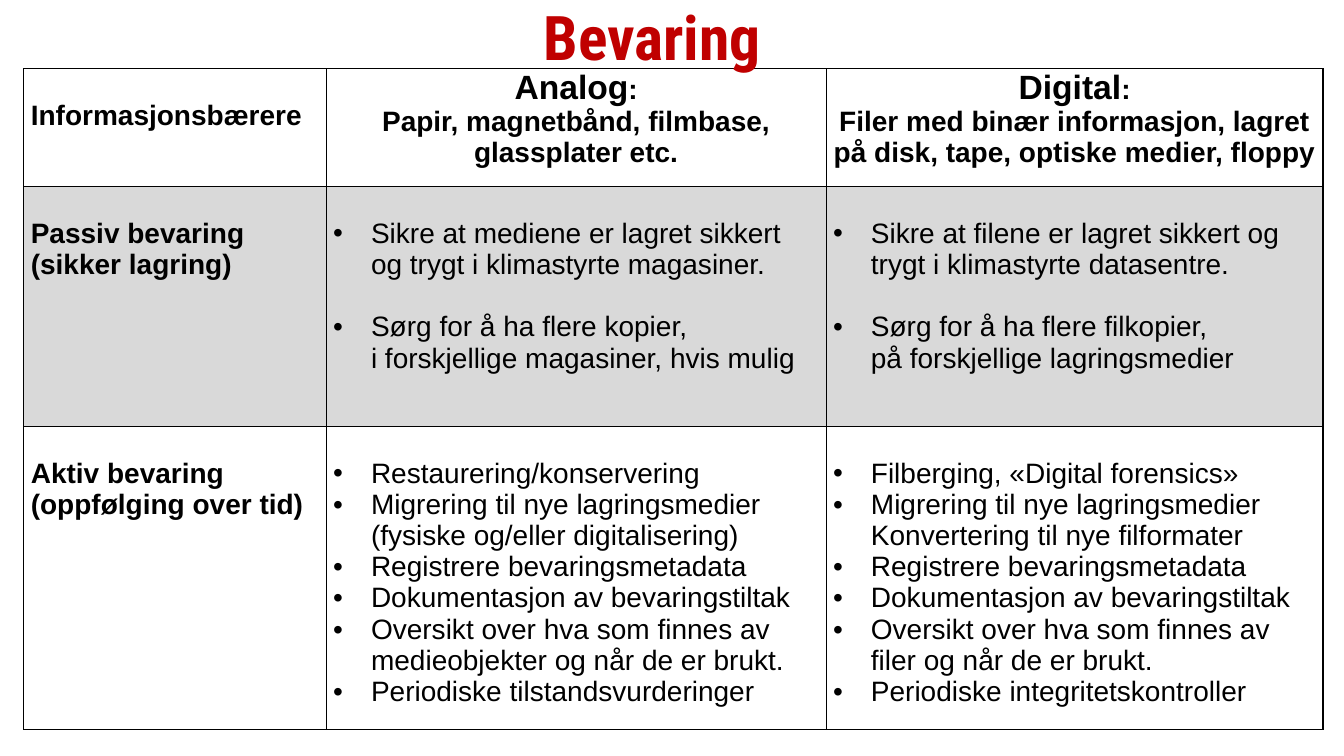
import pptx
import pptx.dml.color
import pptx.enum.text
import pptx.oxml
import pptx.util
from pptx.util import Pt

BODY_FONT = "Arial"
TITLE_FONT = "Roboto Condensed"
BLACK, WHITE, GREY, RED = "000000", "FFFFFF", "D9D9D9", "C00000"
BODY_SIZE = 20
LINE_HEIGHT = 22.34
CENTER = pptx.enum.text.PP_ALIGN.CENTER
LEFT = pptx.enum.text.PP_ALIGN.LEFT
NAMESPACE = 'xmlns:a="http://schemas.openxmlformats.org/drawingml/2006/main"'

COLUMN_WIDTHS = [216, 357.1, 355]
ROW_HEIGHTS = [84.2, 171.4, 216.7]
ROW_FILLS = [WHITE, GREY, WHITE]
ROW_LABELS = [
    "Informasjonsbærere",
    "Passiv bevaring (sikker lagring)",
    "Aktiv bevaring (oppfølging over tid)",
]
HEADINGS = [
    ("Analog", ["Papir, magnetbånd, filmbase,", "glassplater etc."]),
    ("Digital", ["Filer med binær informasjon, lagret på disk, tape, optiske medier, floppy"]),
]
PASSIVE = [
    [
        "Sikre at mediene er lagret sikkert og trygt i klimastyrte magasiner.",
        "Sørg for å ha flere kopier,\ni forskjellige magasiner, hvis mulig",
    ],
    [
        "Sikre at filene er lagret sikkert og trygt i klimastyrte datasentre.",
        "Sørg for å ha flere filkopier,\npå forskjellige lagringsmedier",
    ],
]
ACTIVE = [
    [
        "Restaurering/konservering",
        "Migrering til nye lagringsmedier (fysiske og/eller digitalisering)",
        "Registrere bevaringsmetadata",
        "Dokumentasjon av bevaringstiltak",
        "Oversikt over hva som finnes av medieobjekter og når de er brukt.",
        "Periodiske tilstandsvurderinger",
    ],
    [
        "Filberging, «Digital forensics»",
        "Migrering til nye lagringsmedier Konvertering til nye filformater",
        "Registrere bevaringsmetadata",
        "Dokumentasjon av bevaringstiltak",
        "Oversikt over hva som finnes av filer og når de er brukt.",
        "Periodiske integritetskontroller",
    ],
]


def color(value):
    """Return the colour for a hex string."""
    return pptx.dml.color.RGBColor.from_string(value)


def add_run(paragraph, text, size=BODY_SIZE, bold=False, font=BODY_FONT, fill=BLACK):
    """Add one formatted run to a paragraph."""
    run = paragraph.add_run()
    run.text = text
    run.font.size = Pt(size)
    run.font.bold = bold
    run.font.name = font
    run.font.color.rgb = color(fill)


def add_paragraph(frame, alignment=LEFT):
    """Return the empty first paragraph of a frame, or a new one."""
    first = frame.paragraphs[0]
    paragraph = frame.add_paragraph() if first.runs else first
    paragraph.alignment = alignment
    return paragraph


def add_bullet(frame, text, gap=0):
    """Add a bulleted paragraph, with line breaks where the text has them."""
    paragraph = add_paragraph(frame)
    properties = paragraph._p.get_or_add_pPr()
    properties.set("marL", str(Pt(27)))
    properties.set("indent", str(Pt(-27)))
    for tag in ('buFont typeface="Arial"', 'buChar char="•"'):
        properties.append(pptx.oxml.parse_xml(f"<a:{tag} {NAMESPACE}/>"))
    paragraph.space_before = Pt(gap)
    for index, line in enumerate(text.split("\n")):
        if index:
            paragraph.add_line_break()
        add_run(paragraph, line)


def add_bullets(cell, items, gap=0):
    """Fill a cell with bullets separated by a gap."""
    for index, item in enumerate(items):
        add_bullet(cell.text_frame, item, gap if index else 0)


def add_heading(cell, name, lines):
    """Fill a column heading with its name and description."""
    cell.margin_top = 0
    paragraph = add_paragraph(cell.text_frame, CENTER)
    add_run(paragraph, name, 24, True)
    add_run(paragraph, ":", bold=True)
    for line in lines:
        add_run(add_paragraph(cell.text_frame, CENTER), line, bold=True)


def style_cell(cell, fill):
    """Set the margins, borders and fill of a cell."""
    cell.margin_left = cell.margin_right = Pt(5)
    cell.margin_top = Pt(LINE_HEIGHT)
    cell.margin_bottom = 0
    properties = cell._tc.get_or_add_tcPr()
    for side in "LRTB":
        properties.append(pptx.oxml.parse_xml(
            f'<a:ln{side} {NAMESPACE} w="{Pt(1)}"><a:solidFill>'
            f'<a:srgbClr val="{BLACK}"/></a:solidFill></a:ln{side}>'))
    cell.fill.solid()
    cell.fill.fore_color.rgb = color(fill)


def add_table(slide):
    """Add the bordered table with its row labels."""
    frame = slide.shapes.add_table(
        len(ROW_HEIGHTS), len(COLUMN_WIDTHS), Pt(17), Pt(49),
        Pt(sum(COLUMN_WIDTHS)), Pt(sum(ROW_HEIGHTS)))
    table = frame.table
    table.first_row = table.horz_banding = False
    for column, width in zip(table.columns, COLUMN_WIDTHS):
        column.width = Pt(width)
    for row, height, fill, label in zip(table.rows, ROW_HEIGHTS, ROW_FILLS, ROW_LABELS):
        row.height = Pt(height)
        for cell in row.cells:
            style_cell(cell, fill)
        add_run(add_paragraph(row.cells[0].text_frame), label, bold=True)
    return table


def add_title(slide, text):
    """Add the centred slide title."""
    box = slide.shapes.add_textbox(Pt(377.7), Pt(-4.3), Pt(176.4), Pt(60.5))
    box.text_frame.word_wrap = False
    paragraph = add_paragraph(box.text_frame, CENTER)
    add_run(paragraph, text, 44, True, TITLE_FONT, RED)


def main():
    """Build and save the slide."""
    presentation = pptx.Presentation()
    presentation.slide_width = Pt(960)
    presentation.slide_height = Pt(540)
    slide = presentation.slides.add_slide(presentation.slide_layouts[6])
    table = add_table(slide)
    for index, (name, lines) in enumerate(HEADINGS):
        add_heading(table.cell(0, index + 1), name, lines)
        add_bullets(table.cell(1, index + 1), PASSIVE[index], LINE_HEIGHT)
        add_bullets(table.cell(2, index + 1), ACTIVE[index])
    add_title(slide, "Bevaring")
    presentation.save("out.pptx")


if __name__ == "__main__":
    main()
